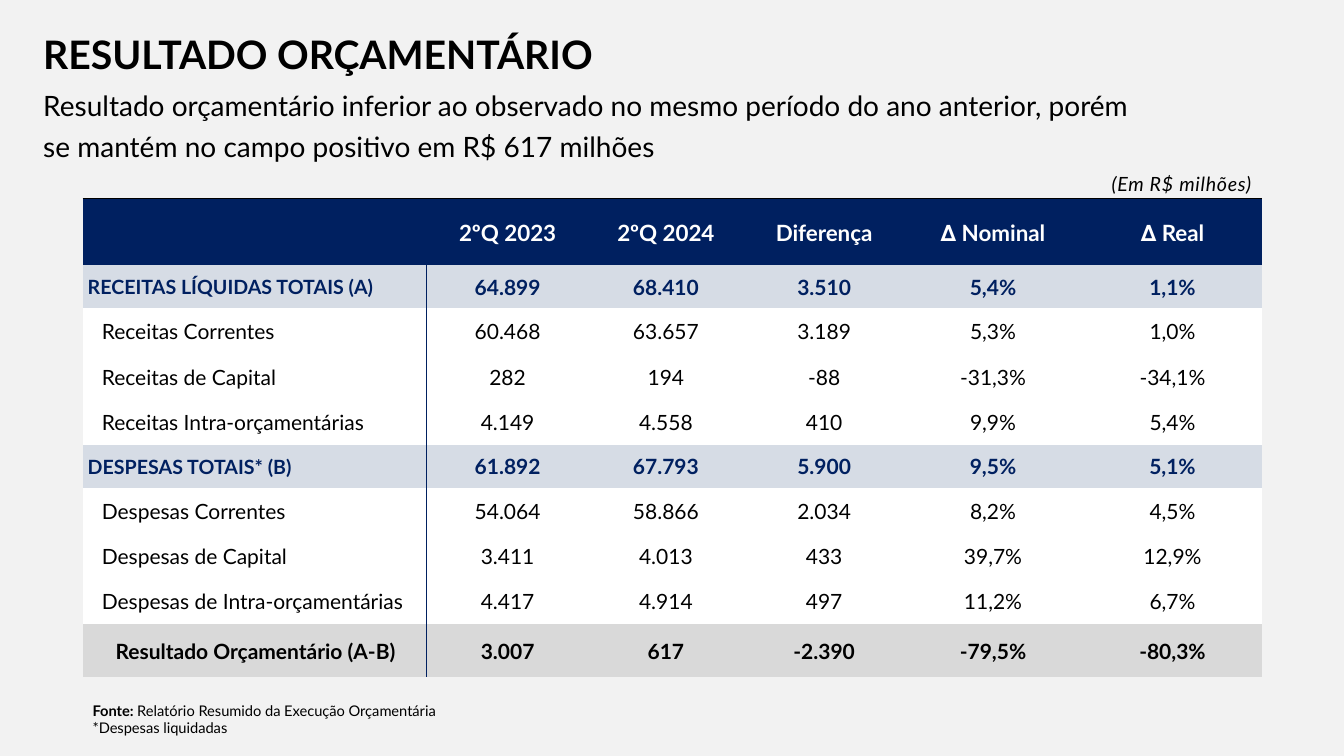
from pptx import Presentation
from pptx.dml.color import RGBColor
from pptx.enum.shapes import MSO_CONNECTOR
from pptx.enum.text import MSO_ANCHOR, PP_ALIGN
from pptx.oxml import parse_xml
from pptx.oxml.ns import nsdecls, qn
from pptx.util import Inches, Pt

FONT = "Lato"
NAVY, BLACK, WHITE = "002060", "000000", "FFFFFF"
PALE, GRAY, BACK = "D6DCE5", "D9D9D9", "F2F2F2"
PLAIN = "{2D5ABB26-0587-4C30-8999-92F81FD0307C}"  # table style without grid

COLS = [3.43, 1.57, 1.57, 1.57, 1.78, 1.78]
# Kind of row: height, fill, text colour, bold, label size, value size, label inset
KINDS = {
    "head": (0.66, NAVY, WHITE, True, 16, 16, 0.01),
    "total": (0.43, PALE, NAVY, True, 14, 15, 0.05),
    "item": (0.45, WHITE, BLACK, False, 15, 15, 0.19),
    "result": (0.53, GRAY, BLACK, True, 15, 15, 0.01),
}
ROWS = [
    ("head", "", "2ºQ 2023", "2ºQ 2024", "Diferença", "∆ Nominal", "∆ Real"),
    ("total", "RECEITAS LÍQUIDAS TOTAIS (A)", "64.899", "68.410", "3.510", "5,4%", "1,1%"),
    ("item", "Receitas Correntes", "60.468", "63.657", "3.189", "5,3%", "1,0%"),
    ("item", "Receitas de Capital", "282", "194", "-88", "-31,3%", "-34,1%"),
    ("item", "Receitas Intra-orçamentárias", "4.149", "4.558", "410", "9,9%", "5,4%"),
    ("total", "DESPESAS TOTAIS* (B)", "61.892", "67.793", "5.900", "9,5%", "5,1%"),
    ("item", "Despesas Correntes", "54.064", "58.866", "2.034", "8,2%", "4,5%"),
    ("item", "Despesas de Capital", "3.411", "4.013", "433", "39,7%", "12,9%"),
    ("item", "Despesas de Intra-orçamentárias", "4.417", "4.914", "497", "11,2%", "6,7%"),
    ("result", "Resultado Orçamentário (A-B)", "3.007", "617", "-2.390", "-79,5%", "-80,3%"),
]


def color(code):
    return RGBColor.from_string(code)


def add_run(para, text, size, tint=BLACK, bold=False, italic=False):
    run = para.add_run()
    run.text = text
    font = run.font
    font.name, font.size = FONT, Pt(size)
    font.bold, font.italic = bold, italic
    font.color.rgb = color(tint)
    return run


def add_box(slide, box, anchor=MSO_ANCHOR.TOP):
    frame = slide.shapes.add_textbox(*map(Inches, box)).text_frame
    frame.word_wrap = True
    frame.vertical_anchor = anchor
    return frame


def add_title(slide, box):
    para = add_box(slide, box, MSO_ANCHOR.MIDDLE).paragraphs[0]
    para.line_spacing = 0.9
    add_run(para, "RESULTADO ORÇAMENTÁRIO", 28, bold=True)


def add_lead(slide, box):
    frame = add_box(slide, box, MSO_ANCHOR.MIDDLE)
    frame.margin_right = Inches(0.7)
    para = frame.paragraphs[0]
    para.line_spacing = 1.2
    add_run(para, "Resultado orçamentário inferior ao observado no mesmo período do ano "
                  "anterior, porém se mantém no campo positivo em R$ 617 milhões", 20)


def add_unit(slide, box):
    para = add_box(slide, box).paragraphs[0]
    para.alignment = PP_ALIGN.RIGHT
    para.line_spacing = 1.2
    run = add_run(para, "(Em R$ milhões)", 14, italic=True)
    run.font._element.set("spc", "50")


def add_source(slide, box):
    frame = add_box(slide, box)
    para = frame.paragraphs[0]
    add_run(para, "Fonte: ", 10.5, bold=True)
    add_run(para, "Relatório Resumido da Execução Orçamentária", 10.5)
    add_run(frame.add_paragraph(), "*Despesas liquidadas", 10.5)


def top_edge(cell):
    cell._tc.get_or_add_tcPr().insert(0, parse_xml(
        f'<a:lnT {nsdecls("a")} w="6350"><a:solidFill>'
        f'<a:srgbClr val="{BLACK}"/></a:solidFill></a:lnT>'))


def fill_cell(cell, text, kind, label):
    _, fill, tint, bold, small, size, inset = KINDS[kind]
    cell.fill.solid()
    cell.fill.fore_color.rgb = color(fill)
    cell.vertical_anchor = MSO_ANCHOR.MIDDLE
    cell.margin_left = Inches(inset if label else 0.01)
    cell.margin_right = cell.margin_top = Inches(0.01)
    cell.margin_bottom = 0
    if kind == "head":
        top_edge(cell)
    if text:
        para = cell.text_frame.paragraphs[0]
        left = label and kind != "result"
        para.alignment = PP_ALIGN.LEFT if left else PP_ALIGN.CENTER
        add_run(para, text, small if label else size, tint, bold)


def add_grid(slide, box):
    frame = slide.shapes.add_table(len(ROWS), len(COLS), *map(Inches, box))
    table = frame.table
    table.first_row = table.horz_banding = False
    table._tbl.tblPr.find(qn("a:tableStyleId")).text = PLAIN
    for col, width in zip(table.columns, COLS):
        col.width = Inches(width)
    for row, (kind, *texts) in zip(table.rows, ROWS):
        row.height = Inches(KINDS[kind][0])
        for i, (cell, text) in enumerate(zip(row.cells, texts)):
            fill_cell(cell, text, kind, i == 0)

    # Rule between labels and values
    x, y, _, high = box
    x += COLS[0] - 0.02
    rule = slide.shapes.add_connector(
        MSO_CONNECTOR.STRAIGHT, *map(Inches, (x, y + 0.44, x, y + high)))
    rule.line.color.rgb = color(NAVY)
    rule.line.width = Pt(0.75)
    rule._element.spPr.append(parse_xml(f'<a:effectLst {nsdecls("a")}/>'))


def main():
    deck = Presentation()
    deck.slide_width, deck.slide_height = Inches(13.33), Inches(7.5)
    slide = deck.slides.add_slide(deck.slide_layouts[6])
    slide.background.fill.solid()
    slide.background.fill.fore_color.rgb = color(BACK)
    add_title(slide, (0.33, 0.17, 10.55, 0.79))
    add_lead(slide, (0.33, 0.82, 11.68, 0.79))
    add_unit(slide, (10.42, 1.61, 2.09, 0.42))
    add_source(slide, (0.82, 6.91, 4.74, 0.45))
    add_grid(slide, (0.82, 1.97, 11.68, 4.75))
    deck.save("out.pptx")


if __name__ == "__main__":
    main()
